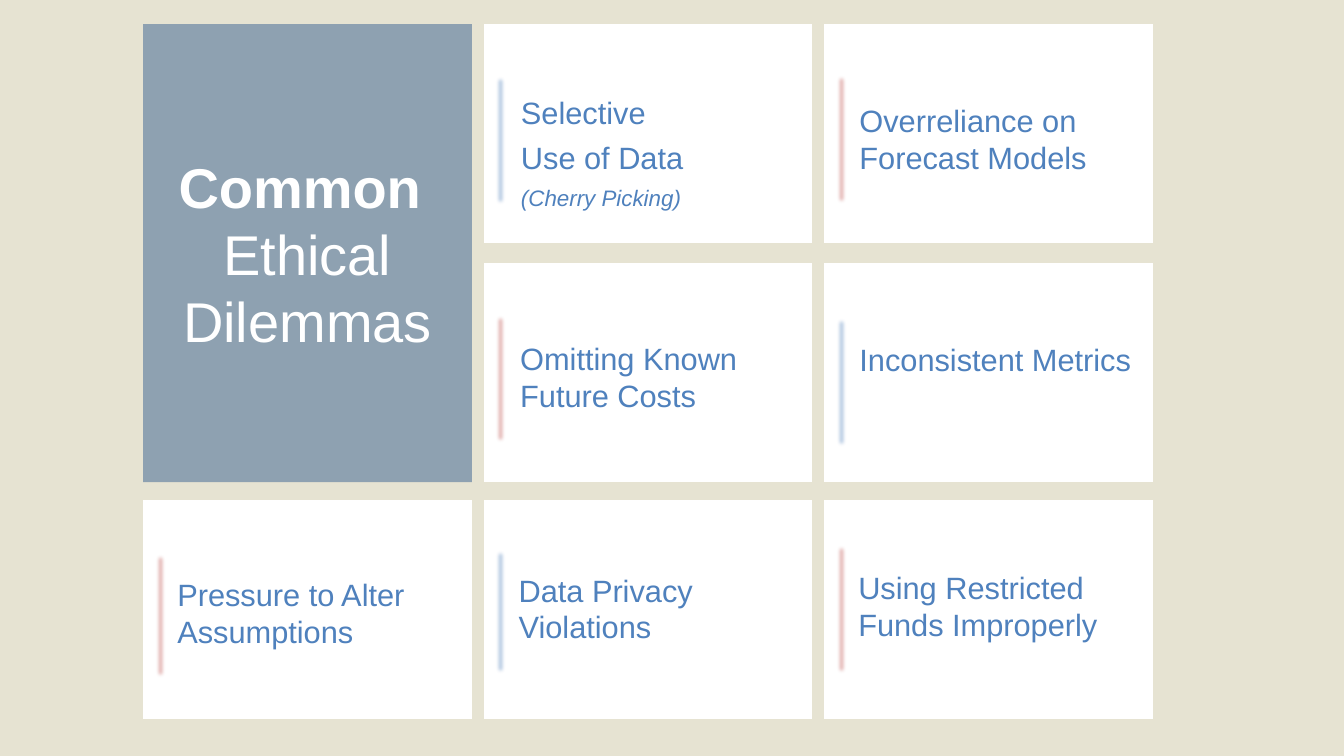
from lxml.etree import SubElement
from pptx import Presentation
from pptx.dml.color import RGBColor
from pptx.enum.shapes import MSO_SHAPE
from pptx.enum.text import MSO_ANCHOR, PP_ALIGN
from pptx.oxml.ns import qn
from pptx.util import Cm, Pt

BEIGE, WHITE, BLUE, RED, NAVY = "E6E3D2", "FFFFFF", "4F81BD", "C0504D", "376092"

COLUMN_LEFTS = [3.61 + 8.58 * column for column in range(3)]
ROW_TOPS = [0.61, 6.64, 12.6]
CARD_WIDTH, CARD_HEIGHT = 8.28, 5.51
BAR_INSET, BAR_WIDTH = 0.31, 0.25

TITLE = [("Common ", 40, True, False), ("Ethical Dilemmas", 40, False, False)]

# column, row, lines, text (left, top, width, height), bar (top, height), bar colour
CARDS = [
    (1, 0, [("Selective", 22), ("Use of Data", 22), ("(Cherry Picking)", 16, False, True)],
     (12.88, 2.24, 6.68, 3.25), (1.88, 3.33), BLUE),
    (2, 0, [("Overreliance on Forecast Models", 22)],
     (21.41, 2.44, 8.18, 2.13), (1.85, 3.33), RED),
    (1, 1, [("Omitting Known Future Costs", 22)],
     (12.86, 8.43, 8.1, 2.13), (7.9, 3.3), RED),
    (2, 1, [("Inconsistent Metrics", 22)],
     (21.41, 8.46, 9.6, 1.19), (7.98, 3.33), BLUE),
    (0, 2, [("Pressure to Alter Assumptions", 22)],
     (4.22, 14.38, 7.85, 2.13), (13.92, 3.2), RED),
    (1, 2, [("Data Privacy Violations", 22)],
     (12.82, 14.27, 7.85, 2.13), (13.82, 3.2), BLUE),
    (2, 2, [("Using Restricted Funds Improperly", 22)],
     (21.38, 14.2, 7.85, 2.13), (13.7, 3.33), RED),
]


def paint(fill, color, opacity=100):
    fill.solid()
    fill.fore_color.rgb = RGBColor.from_string(color)
    if opacity < 100:
        color_node = fill._xPr.find(qn("a:solidFill"))[0]
        SubElement(color_node, qn("a:alpha"), val=str(opacity * 1000))


def add_block(page, kind, bounds, color, opacity=100):
    block = page.shapes.add_shape(kind, *map(Cm, bounds))
    block.shadow.inherit = False
    block.line.fill.background()
    paint(block.fill, color, opacity)
    return block


def soften_edges(block, radius):
    effects = block._element.spPr.find(qn("a:effectLst"))
    SubElement(effects, qn("a:softEdge"), rad=str(Pt(radius)))


def write(frame, lines, color=BLUE, align=PP_ALIGN.LEFT, anchor=MSO_ANCHOR.TOP, space_after=0):
    """Fill a text frame with (text, size, bold, italic) lines, one paragraph each."""
    frame.word_wrap = True
    frame.vertical_anchor = anchor
    for index, (text, size, *style) in enumerate(lines):
        para = frame.add_paragraph() if index else frame.paragraphs[0]
        para.alignment = align
        para.space_after = Pt(space_after)
        span = para.add_run()
        span.text = text
        font = span.font
        font.name, font.size = "Arial", Pt(size)
        font.bold, font.italic = style or (False, False)
        font.color.rgb = RGBColor.from_string(color)


def add_card(page, column, row, lines, text_bounds, bar_span, bar_color):
    left = COLUMN_LEFTS[column]
    add_block(page, MSO_SHAPE.FLOWCHART_PROCESS,
              (left, ROW_TOPS[row], CARD_WIDTH, CARD_HEIGHT), WHITE)
    bar_top, bar_height = bar_span
    bar = add_block(page, MSO_SHAPE.ROUNDED_RECTANGLE,
                    (left + BAR_INSET, bar_top, BAR_WIDTH, bar_height), bar_color, opacity=50)
    bar.adjustments[0] = 0.5
    soften_edges(bar, 2.5)
    box = page.shapes.add_textbox(*map(Cm, text_bounds))
    write(box.text_frame, lines, space_after=6)


def main():
    deck = Presentation()
    deck.slide_width, deck.slide_height = Cm(33.87), Cm(19.05)
    page = deck.slides.add_slide(deck.slide_layouts[6])
    paint(page.background.fill, BEIGE)
    for card in CARDS:
        add_card(page, *card)
    title_height = ROW_TOPS[1] + CARD_HEIGHT - ROW_TOPS[0]
    panel = add_block(page, MSO_SHAPE.FLOWCHART_PROCESS,
                      (COLUMN_LEFTS[0], ROW_TOPS[0], CARD_WIDTH, title_height), NAVY, opacity=50)
    write(panel.text_frame, TITLE, color=WHITE, align=PP_ALIGN.CENTER, anchor=MSO_ANCHOR.MIDDLE)
    deck.save("out.pptx")


if __name__ == "__main__":
    main()
